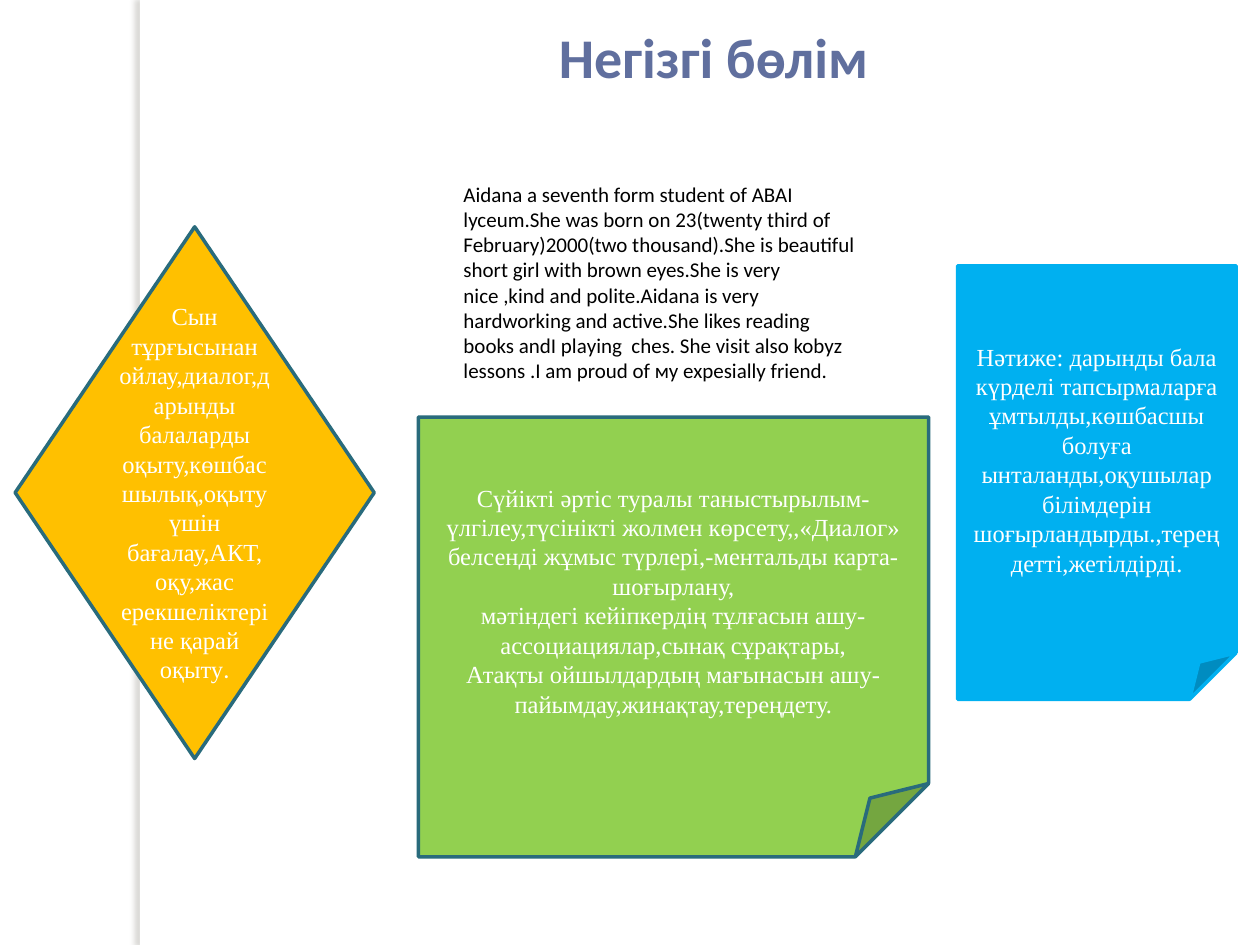
from lxml import etree
from pptx import Presentation
from pptx import util as u
from pptx.dml.color import RGBColor
from pptx.enum import shapes, text
from pptx.oxml.ns import qn

PX = 9144  # EMU per px, 100 px to the inch
SERIF, SANS = "Times New Roman", "Calibri"
WHITE, BLACK, TEAL, BLUE = "FFFFFF", "000000", "296B7C", "00B0F0"
MID = text.MSO_ANCHOR.MIDDLE
TOP = text.MSO_ANCHOR.TOP
CENTER = text.PP_ALIGN.CENTER
LEFT = text.PP_ALIGN.LEFT
KIND = shapes.MSO_SHAPE


def color(code):
    return RGBColor.from_string(code)


def scale(*box):
    return [u.Emu(n * PX) for n in box]


class Deck:
    def __init__(self):
        self.prs = Presentation()
        self.prs.slide_width, self.prs.slide_height = scale(1000, 750)
        self.slide = self.prs.slides.add_slide(self.prs.slide_layouts[5])

    def style(self, run, size, font, tone, bold=False):
        run.font.size = u.Pt(size)
        run.font.name = font
        run.font.bold = bold
        run.font.color.rgb = color(tone)

    def fill_text(self, shape, lines, size, font, tone, align, anchor,
                  bold=False):
        frame = shape.text_frame
        frame.text = "\n".join(lines)
        frame.word_wrap = True
        frame.auto_size = text.MSO_AUTO_SIZE.NONE
        frame.vertical_anchor = anchor
        for para in frame.paragraphs:
            para.alignment = align
            for run in para.runs:
                self.style(run, size, font, tone, bold)

    def title(self, box, line):
        shape = self.slide.shapes.title
        shape.left, shape.top, shape.width, shape.height = scale(*box)
        self.fill_text(shape, [line], 32, SANS, "606F9E", CENTER, TOP, True)

    def label(self, box, lines):
        shape = self.slide.shapes.add_textbox(*scale(*box))
        self.fill_text(shape, lines, 12, SANS, BLACK, LEFT, TOP)

    def shape(self, kind, box, fill, line=None):
        shape = self.slide.shapes.add_shape(kind, *scale(*box))
        shape.shadow.inherit = False
        shape.fill.solid()
        shape.fill.fore_color.rgb = color(fill)
        if line:
            shape.line.color.rgb = color(line)
            shape.line.width = u.Pt(2)
        else:
            shape.line.fill.background()
        return shape

    def card(self, kind, box, fill, line, lines):
        shape = self.shape(kind, box, fill, line)
        self.fill_text(shape, lines, 14, SERIF, WHITE, CENTER, MID)
        return shape

    def strip(self, box):
        shape = self.shape(KIND.RECTANGLE, box, WHITE)
        # Soft shadow falling to the left
        glow = shape._element.spPr.find(qn("a:effectLst"))
        cast = etree.SubElement(glow, qn("a:outerShdw"), blurRad=str(u.Pt(3)),
                                dist=str(u.Pt(3)), dir="10800000",
                                algn="tl", rotWithShape="0")
        tone = etree.SubElement(cast, qn("a:srgbClr"), val="736F63")
        etree.SubElement(tone, qn("a:alpha"), val="25000")


def main():
    deck = Deck()

    # Side strip and heading
    deck.strip((111, 0, 8, 750))
    deck.title((358, 13, 417, 64), "Негізгі бөлім")

    # Main activities
    deck.card(KIND.FOLDED_CORNER, (332, 331, 405, 349), "92D050", TEAL, [
        "Сүйікті әртіс туралы таныстырылым-үлгілеу,түсінікті жолмен "
        "көрсету,,«Диалог» белсенді жұмыс түрлері,-ментальды "
        "карта-шоғырлану,",
        "мәтіндегі кейіпкердің тұлғасын ашу-ассоциациялар,сынақ сұрақтары,",
        "Атақты ойшылдардың мағынасын ашу-пайымдау,жинақтау,тереңдету.",
    ])

    # Methods, closed by a full stop in the sans font
    gem = deck.card(KIND.DIAMOND, (12, 180, 285, 422), "FFC000", TEAL, [
        "Сын тұрғысынан ойлау,диалог,дарынды балаларды "
        "оқыту,көшбасшылық,оқыту үшін бағалау,АКТ, оқу,жас "
        "ерекшеліктеріне қарай оқыту",
    ])
    stop = gem.text_frame.paragraphs[0].add_run()
    stop.text = "."
    deck.style(stop, 14, SANS, WHITE)

    # Result
    deck.card(KIND.FOLDED_CORNER, (760, 211, 221, 344), BLUE, BLUE, [
        "Нәтиже: дарынды бала күрделі тапсырмаларға ұмтылды,көшбасшы "
        "болуға ынталанды,оқушылар білімдерін "
        "шоғырландырды.,тереңдетті,жетілдірді.",
    ])

    # Sample text
    deck.label((358, 139, 331, 172), [
        "Aidana a seventh form student of ABAI",
        "lyceum.She was born on 23(twenty third of February)2000(two "
        "thousand).She is beautiful short girl with brown eyes.She is very "
        "nice ,kind and polite.Aidana is very hardworking and active.She "
        "likes reading books andI plaуіng  ches. She visit also kobyz "
        "lessons .I am proud of му expesially friend.",
    ])

    deck.prs.save("out.pptx")


if __name__ == "__main__":
    main()
